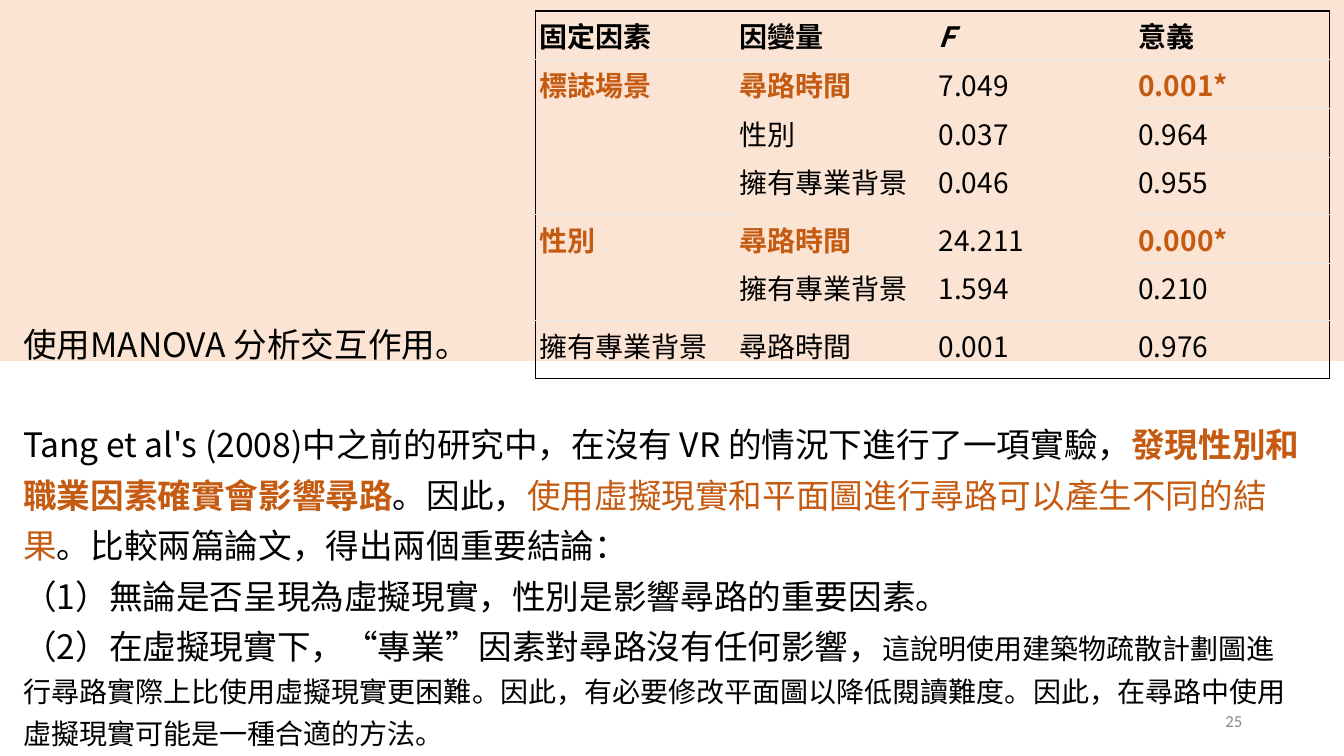
"""Build the MANOVA slide: a results table above the conclusions drawn from it."""
import pptx
import pptx.dml.color
import pptx.enum.shapes
import pptx.enum.text
import pptx.oxml
import pptx.oxml.ns
import pptx.util
import lxml.etree

Inches = pptx.util.Inches
Pt = pptx.util.Pt
theme = {
    "font": "Noto Sans CJK TC", "num": "Calibri",
    "ink": "000000", "hot": "C55A11", "band": "FBE4D4", "rule": "EBEBEB", "grey": "888888",
    "body": 24, "cell": 20, "foot": 12,
}


def style(run, size, color="ink", bold=False, face="font"):
    font = run.font
    font.name = theme[face]
    font.size = Pt(theme[size])
    font.bold = bold
    font.color.rgb = pptx.dml.color.RGBColor.from_string(theme[color])
    east = lxml.etree.SubElement(font._element, pptx.oxml.ns.qn("a:ea"))
    east.set("typeface", theme[face])


def border(cell, sides):
    cell.fill.background()
    props = cell._tc.get_or_add_tcPr()
    for i, (side, color) in enumerate(sides.items()):
        width = Pt(1) if color == "ink" else Pt(0.75)
        fill = f'<a:solidFill><a:srgbClr val="{theme[color]}"/></a:solidFill>' if color else "<a:noFill/>"
        line = f'<a:ln{side} {pptx.oxml.ns.nsdecls("a")} w="{width}">{fill}</a:ln{side}>'
        props.insert(i, pptx.oxml.parse_xml(line))


deck = pptx.Presentation()
deck.slide_width = Inches(13.33)
deck.slide_height = Inches(7.5)
slide = deck.slides.add_slide(deck.slide_layouts[1])
title = slide.shapes.title._element
title.getparent().remove(title)

band = slide.shapes.add_shape(
    pptx.enum.shapes.MSO_SHAPE.RECTANGLE, 0, 0, Inches(13.36), Inches(3.58))
band.shadow.inherit = False
band.fill.solid()
band.fill.fore_color.rgb = pptx.dml.color.RGBColor.from_string(theme["band"])
band.line.fill.background()
slide.shapes._spTree.insert(2, band._element)

body = slide.placeholders[1]
body.left, body.top = Inches(0.13), Inches(3.06)
body.width, body.height = Inches(12.86), Inches(4.48)
frame = body.text_frame
frame.word_wrap = True
frame.auto_size = pptx.enum.text.MSO_AUTO_SIZE.NONE
frame.vertical_anchor = pptx.enum.text.MSO_ANCHOR.TOP

notes = [
    (0, [("使用MANOVA 分析交互作用。", "body", "ink", False)]),
    (36, [
        ("Tang et al's (2008)中之前的研究中，在沒有 VR 的情況下進行了一項實驗，", "body", "ink", False),
        ("發現性別和職業因素確實會影響尋路", "body", "hot", True),
        ("。因此，", "body", "ink", False),
        ("使用虛擬現實和平面圖進行尋路可以產生不同的結果", "body", "hot", False),
        ("。比較兩篇論文，得出兩個重要結論：", "body", "ink", False),
    ]),
    (0, [("（1）無論是否呈現為虛擬現實，性別是影響尋路的重要因素。", "body", "ink", False)]),
    (0, [
        ("（2）在虛擬現實下，“專業”因素對尋路沒有任何影響，", "body", "ink", False),
        ("這說明使用建築物疏散計劃圖進行尋路實際上比使用虛擬現實更困難。因此，有必要修改平面圖以"
         "降低閱讀難度。因此，在尋路中使用虛擬現實可能是一種合適的方法。", "cell", "ink", False),
    ]),
]
for i, (gap, parts) in enumerate(notes):
    para = frame.add_paragraph() if i else frame.paragraphs[0]
    para.line_spacing = 1.25
    para.space_before = Pt(gap)
    para.space_after = Pt(0)
    props = para._p.get_or_add_pPr()
    props.set("marL", "0")
    props.set("indent", "0")
    lxml.etree.SubElement(props, pptx.oxml.ns.qn("a:buNone"))
    for text, size, color, bold in parts:
        run = para.add_run()
        run.text = text
        style(run, size, color, bold)

rows = [
    ("固定因素", "因變量", "F", "意義"),
    ("標誌場景", "尋路時間", "7.049", "0.001*"),
    ("", "性別", "0.037", "0.964"),
    ("", "擁有專業背景", "0.046", "0.955"),
    ("性別", "尋路時間", "24.211", "0.000*"),
    ("", "擁有專業背景", "1.594", "0.210"),
    ("擁有專業背景", "尋路時間", "0.001", "0.976"),
]
wide = [1.98, 1.98, 1.98, 1.94]
high = [0.48, 0.41, 0.41, 0.57, 0.41, 0.57, 0.57]
last, edge = len(rows) - 1, len(wide) - 1
shape = slide.shapes.add_table(
    len(rows), len(wide), Inches(5.31), Inches(0.11), Inches(sum(wide)), Inches(sum(high)))
table = shape.table
table.first_row = table.horz_banding = False
table._tbl.tblPr.find(pptx.oxml.ns.qn("a:tableStyleId")).text = "{2D5ABB26-0587-4C30-8999-92F81FD0307C}"
for col, width in zip(table.columns, wide):
    col.width = Inches(width)
for row, height in zip(table.rows, high):
    row.height = Inches(height)

for r, row in enumerate(rows):
    key = row[3].endswith("*")
    for c, text in enumerate(row):
        cell = table.cell(r, c)
        cell.margin_left = cell.margin_right = Inches(0.04)
        cell.margin_top = cell.margin_bottom = Inches(0.04)
        side = c in (0, edge)
        border(cell, {
            "L": "ink" if c == 0 else None,
            "R": "ink" if c == edge else None,
            "T": "ink" if r == 0 else "rule" if side or r in (1, last) else None,
            "B": "ink" if r == last else "rule" if side or r in (0, last - 1) else None,
        })
        if text:
            cell.text_frame.text = text
            hot = key and c != 2
            run = cell.text_frame.paragraphs[0].runs[0]
            style(run, "cell", "hot" if hot else "ink", hot or r == 0)
            run.font.italic = text == "F"
for top, end in ((1, 3), (4, 5)):
    table.cell(top, 0).merge(table.cell(end, 0))

page = slide.shapes.add_textbox(Inches(9.42), Inches(6.95), Inches(3), Inches(0.4))
page.text_frame.word_wrap = True
page.text_frame.vertical_anchor = pptx.enum.text.MSO_ANCHOR.MIDDLE
page.text_frame.text = "25"
para = page.text_frame.paragraphs[0]
para.alignment = pptx.enum.text.PP_ALIGN.RIGHT
style(para.runs[0], "foot", "grey", face="num")

deck.save("out.pptx")
